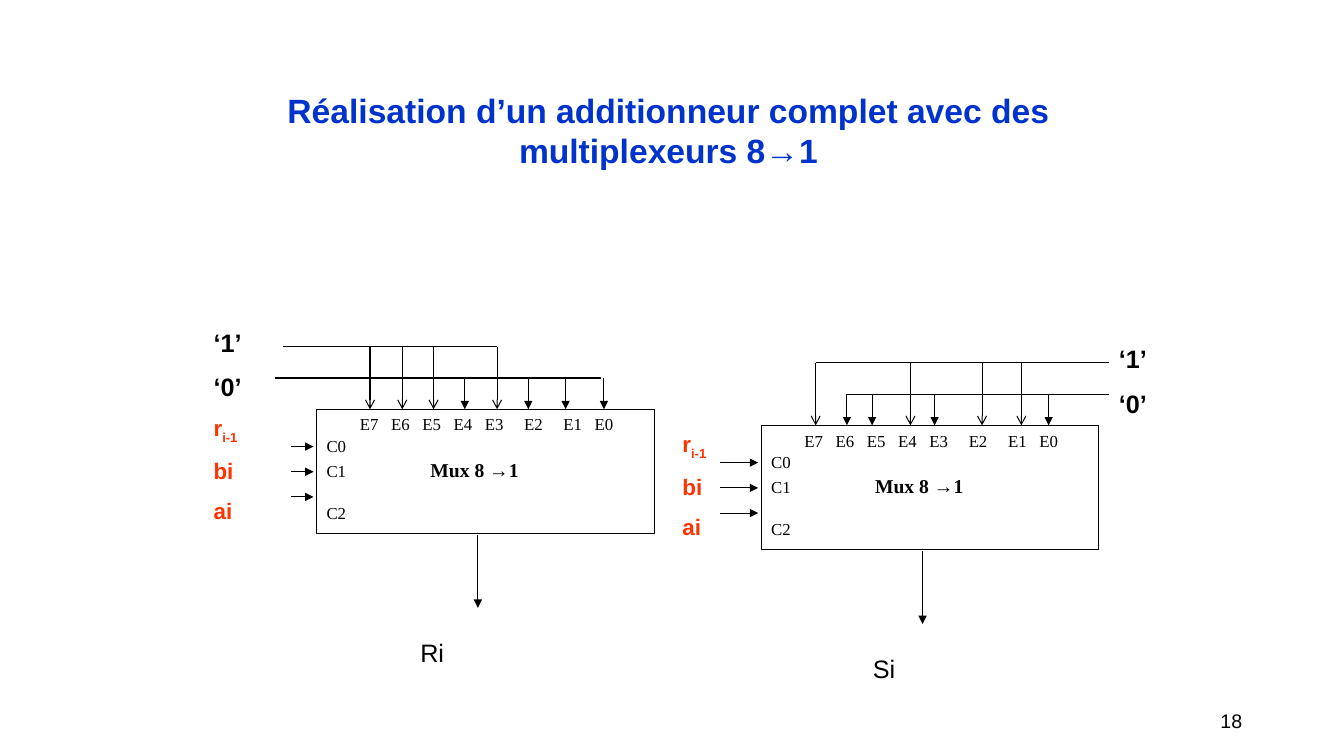
from dataclasses import dataclass

from lxml.etree import SubElement
from pptx import Presentation
from pptx.dml.color import RGBColor
from pptx.enum.shapes import MSO_CONNECTOR as Connector, MSO_SHAPE as Shape
from pptx.enum.text import MSO_ANCHOR as Anchor, MSO_AUTO_SIZE as AutoSize, PP_ALIGN as Align
from pptx.oxml.ns import qn
from pptx.util import Inches, Pt


@dataclass(frozen=True)
class Theme:
    sans: str = "Arial"
    serif: str = "Times New Roman"
    blue: str = "0033CC"
    red: str = "FF3300"
    black: str = "000000"
    white: str = "FFFFFF"
    title: int = 24
    level: int = 18
    control: int = 16
    name: int = 14
    pin: int = 12
    line: float = 0.75


@dataclass(frozen=True)
class Mux:
    """One multiplexer; horizontal values are cells from its left edge."""
    left: float
    top: float
    ones: tuple          # pins wired to '1'
    zeros: tuple         # pins wired to '0'
    ones_rail: tuple
    zeros_rail: tuple
    control_start: float
    level_label: float
    control_label: float
    output: str
    output_label: float


THEME = Theme()
TENTH = Inches(0.1)      # the slide grid has square cells of a tenth of an inch
COLUMNS, ROWS = 133.3, 75
MUX_WIDTH, MUX_HEIGHT = 33.5, 12.3
ONES_ROW, ZEROS_ROW = -6.2, -3.1
CONTROL_ROWS = [3.7 + 2.5 * index for index in range(3)]
PIN_TABS = [3.3 + 3.1 * index for index in range(5)] + [19.6, 23.5, 26.6]
NAME_TAB = 10.3

CARRY_MUX = Mux(left=31.4, top=40.6,
                ones=(5.3, 8.5, 11.6, 17.9), zeros=(14.7, 21, 24.7, 28.5),
                ones_rail=(-3.3, 17.9), zeros_rail=(-4.1, 28.2),
                control_start=-2.5, level_label=-11.2, control_label=-11.2,
                output="Ri", output_label=9.3)
SUM_MUX = Mux(left=75.5, top=42.2,
              ones=(5.4, 14.8, 21.9, 25.8), zeros=(8.5, 11, 17.2, 28.5),
              ones_rail=(5.4, 34.5), zeros_rail=(8.5, 34.5),
              control_start=-4.1, level_label=34.5, control_label=-8.8,
              output="Si", output_label=10.1)


def cells(count):
    return round(count * TENTH)


def write(para, text, size=THEME.level, color=THEME.black, font=THEME.sans,
          bold=False, baseline=None):
    span = para.add_run()
    span.text = text
    span.font.size, span.font.name, span.font.bold = Pt(size), font, bold
    span.font.color.rgb = RGBColor.from_string(color)
    if baseline:
        span.font._element.set("baseline", str(baseline))


def add_lines(slide, box, lines, size=THEME.level, align=Align.LEFT, anchor=Anchor.TOP, **style):
    """Each line is a list of (text, baseline) pairs."""
    frame = slide.shapes.add_textbox(*map(cells, box)).text_frame
    frame.word_wrap, frame.vertical_anchor = True, anchor
    for index, line in enumerate(lines):
        para = frame.add_paragraph() if index else frame.paragraphs[0]
        para.alignment = align
        para.space_before = Pt(round(size * 0.55) if index else 0)
        for text, baseline in line:
            write(para, text, size=size, baseline=baseline, **style)


def add_wire(slide, start, end, arrow=None):
    wire = slide.shapes.add_connector(Connector.STRAIGHT, *map(cells, start + end))
    wire.line.width = Pt(THEME.line)
    wire.line.color.rgb = RGBColor.from_string(THEME.black)
    if arrow:
        SubElement(wire.line._get_or_add_ln(), qn("a:tailEnd"), type=arrow)
    SubElement(wire._element.spPr, qn("a:effectLst"))


def set_tabs(para, stops):
    tabs = SubElement(para._p.get_or_add_pPr(), qn("a:tabLst"))
    for stop in stops:
        SubElement(tabs, qn("a:tab"), pos=str(cells(stop)), algn="l")


def add_block(slide, left, top):
    """The multiplexer body with its pin names."""
    body = slide.shapes.add_shape(
        Shape.RECTANGLE, *map(cells, (left, top, MUX_WIDTH, MUX_HEIGHT)))
    body.shadow.inherit = False
    body.fill.solid()
    body.fill.fore_color.rgb = RGBColor.from_string(THEME.white)
    body.line.color.rgb = RGBColor.from_string(THEME.black)
    body.line.width = Pt(THEME.line)
    frame = body.text_frame
    frame.word_wrap, frame.vertical_anchor = True, Anchor.TOP
    pins = "".join(f"\tE{number}" for number in range(7, -1, -1))
    rows = [(pins, PIN_TABS, 0), ("C0", [], 1.2), ("C1\t", [NAME_TAB], 1.2), ("C2", [], 15)]
    for index, (text, stops, gap) in enumerate(rows):
        para = frame.add_paragraph() if index else frame.paragraphs[0]
        para.alignment, para.space_before = Align.LEFT, Pt(gap)
        if stops:
            set_tabs(para, stops)
        write(para, text, size=THEME.pin, font=THEME.serif)
        if text.startswith("C1"):
            write(para, "Mux 8 →1", size=THEME.name, font=THEME.serif, bold=True)


def add_mux(slide, mux):
    def at(column, row):
        return mux.left + column, mux.top + row

    add_block(slide, mux.left, mux.top)

    # Constant rails and their drops to the pins
    for row, rail, pins, arrow in ((ONES_ROW, mux.ones_rail, mux.ones, "arrow"),
                                   (ZEROS_ROW, mux.zeros_rail, mux.zeros, "triangle")):
        add_wire(slide, at(rail[0], row), at(rail[1], row))
        for pin in pins:
            add_wire(slide, at(pin, row), at(pin, 0), arrow)

    # Control inputs and output
    for row in CONTROL_ROWS:
        add_wire(slide, at(mux.control_start, row), at(-0.3, row), "triangle")
    add_wire(slide, at(16, 12.5), at(16, 19.7), "triangle")

    # Signal names
    add_lines(slide, at(mux.level_label, -8.6) + (6.3, 8.5),
              [[("‘1’", None)], [("‘0’", None)]], bold=True)
    add_lines(slide, at(mux.control_label, 0) + (7.1, 15.7),
              [[("r", None), ("i-1", -25000)], [("bi", None)], [("ai", None)]],
              size=THEME.control, color=THEME.red, bold=True)
    add_lines(slide, at(mux.output_label, 22.1) + (11, 4), [[(mux.output, None)]])


def add_title(slide, box):
    title = slide.shapes.title
    title.left, title.top, title.width, title.height = map(cells, box)
    frame = title.text_frame
    frame.word_wrap, frame.auto_size = True, AutoSize.NONE
    frame.vertical_anchor = Anchor.TOP
    para = frame.paragraphs[0]
    para.alignment = Align.CENTER
    write(para, "Réalisation d’un additionneur complet avec des multiplexeurs 8→1",
          size=THEME.title, color=THEME.blue, bold=True)


def main():
    deck = Presentation()
    deck.slide_width, deck.slide_height = cells(COLUMNS), cells(ROWS)
    page = deck.slides.add_slide(deck.slide_layouts[5])
    add_title(page, (22.6, 8.4, 87.4, 13.1))
    for mux in (CARRY_MUX, SUM_MUX):
        add_mux(page, mux)
    # Page number
    add_lines(page, (94.2, 69.5, 30, 4), [[("18", None)]], size=THEME.name,
              align=Align.RIGHT, anchor=Anchor.MIDDLE)
    deck.save("out.pptx")


if __name__ == "__main__":
    main()
